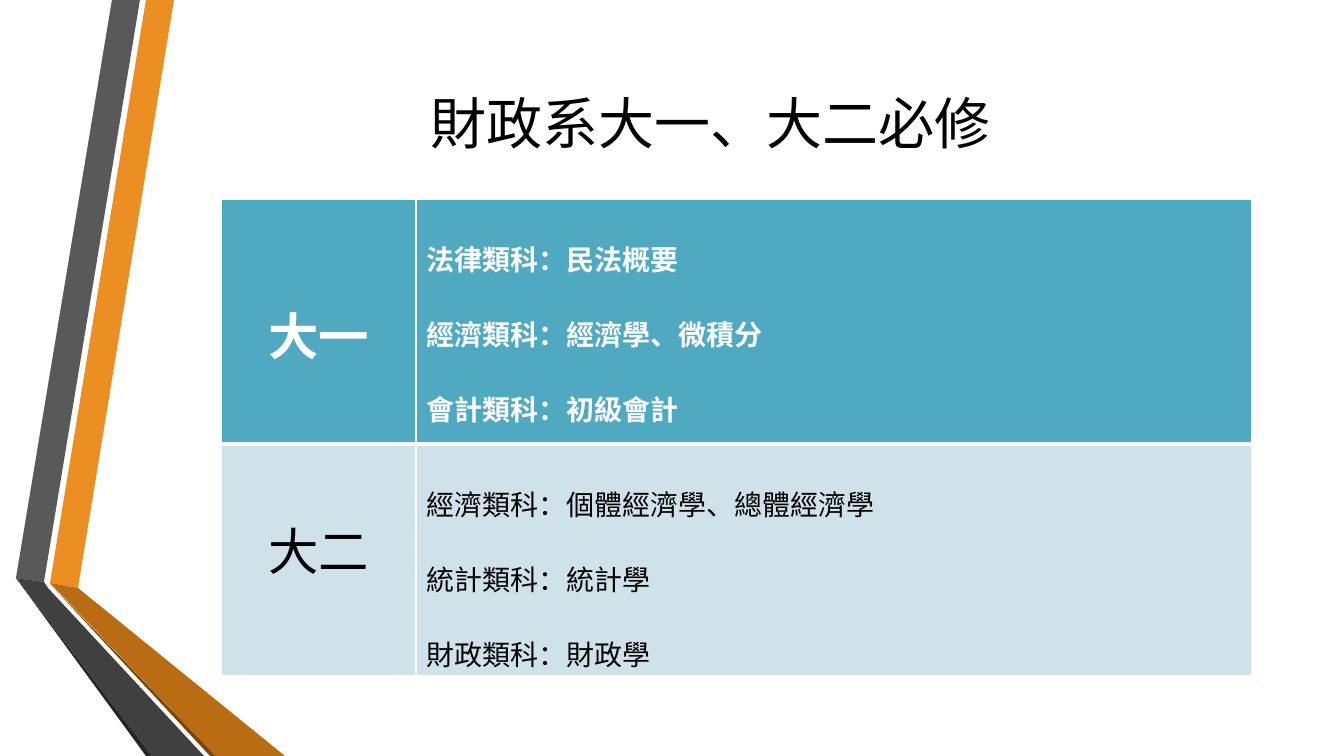
import pptx
import pptx.util
import pptx.dml.color
import pptx.enum.text
import pptx.oxml
import pptx.oxml.ns
import lxml.etree

PX = 9071
RGB = pptx.dml.color.RGBColor
Pt = pptx.util.Pt
ALIGN = pptx.enum.text.PP_ALIGN
MID = pptx.enum.text.MSO_ANCHOR.MIDDLE
qn = pptx.oxml.ns.qn
WHITE = RGB(0xFF, 0xFF, 0xFF)
BLACK = RGB(0, 0, 0)
TEAL = RGB(0x4F, 0xA9, 0xC1)
PALE = RGB(0xD0, 0xE2, 0xE9)
ORANGE = RGB(0xEB, 0x8F, 0x22)
BROWN = RGB(0x7B, 0x48, 0x0B)
AMBER = RGB(0xB9, 0x6C, 0x11)
GRAY = RGB(0x59, 0x59, 0x59)
DARK = RGB(0x40, 0x40, 0x40)
INK = RGB(0x26, 0x26, 0x26)
CJK = "Noto Sans CJK SC"


def style(para, name, size, color, bold):
    for run in para.runs:
        run.font.name = name
        run.font.size = Pt(size)
        run.font.bold = bold
        run.font.color.rgb = color
        east = lxml.etree.SubElement(run.font._element, qn("a:ea"))
        east.set("typeface", CJK)


def edge(cell, side, width):
    line = lxml.etree.SubElement(cell._tc.get_or_add_tcPr(), qn("a:ln" + side))
    line.set("w", str(Pt(width)))
    fill = lxml.etree.SubElement(line, qn("a:solidFill"))
    lxml.etree.SubElement(fill, qn("a:srgbClr")).set("val", str(WHITE))


deck = pptx.Presentation()
deck.slide_width = 1344 * PX
deck.slide_height = 756 * PX
slide = deck.slides.add_slide(deck.slide_layouts[5])

bands = [
    (ORANGE, [(50, 583), (78, 588), (174, 0), (146, 0)]),
    (GRAY, [(140, 0), (112, 0), (16, 578), (44, 582)]),
    (INK, [(16, 578), (146, 756), (152, 756)]),
    (BROWN, [(50, 584), (210, 756), (216, 756)]),
    (AMBER, [(50, 583), (216, 756), (285, 756), (78, 588)]),
    (DARK, [(204, 756), (48, 588), (44, 582), (16, 578), (152, 756)]),
]
for color, points in bands:
    pen = slide.shapes.build_freeform(*points[0], scale=PX)
    pen.add_line_segments(points[1:], close=True)
    band = pen.convert_to_shape()
    band.shadow.inherit = False
    band.fill.solid()
    band.fill.fore_color.rgb = color
    band.line.fill.background()

title = slide.shapes.title
title.left, title.top = 158 * PX, 25 * PX
title.width, title.height = 1105 * PX, 194 * PX
frame = title.text_frame
frame.text = "財政系大一、大二必修"
frame.vertical_anchor = MID
frame.paragraphs[0].alignment = ALIGN.CENTER
style(frame.paragraphs[0], CJK, 40, BLACK, False)

years = [
    ("大一", ["法律類科：民法概要", "經濟類科：經濟學、微積分", "會計類科：初級會計"],
     TEAL, WHITE, True, 245, 98),
    ("大二", ["經濟類科：個體經濟學、總體經濟學", "統計類科：統計學", "財政類科：財政學"],
     PALE, BLACK, False, 232, 68),
]
table = slide.shapes.add_table(2, 2, 221 * PX, 199 * PX, 1031 * PX, 477 * PX).table
table.columns[0].width = 195 * PX
table.columns[1].width = 836 * PX
for row, (year, courses, back, ink, bold, height, drop) in enumerate(years):
    table.rows[row].height = height * PX
    label, detail = table.cell(row, 0), table.cell(row, 1)
    label.text_frame.text = year
    label.margin_top = drop * PX
    label.text_frame.paragraphs[0].alignment = ALIGN.CENTER
    style(label.text_frame.paragraphs[0], "Calibri", 36, ink, bold)
    detail.text_frame.text = "\n".join(courses)
    detail.margin_top = 39 * PX
    for pos, para in enumerate(detail.text_frame.paragraphs):
        if pos:
            para.space_before = Pt(24.4)
        style(para, "Calibri", 20, ink, bold)
    for cell in (label, detail):
        cell.margin_bottom = 0
        edge(cell, "L", 1)
        edge(cell, "R", 1)
        edge(cell, "T", 3 if row == 1 else 1)
        edge(cell, "B", 3 if row == 0 else 1)
        cell.fill.solid()
        cell.fill.fore_color.rgb = back

deck.save("out.pptx")
